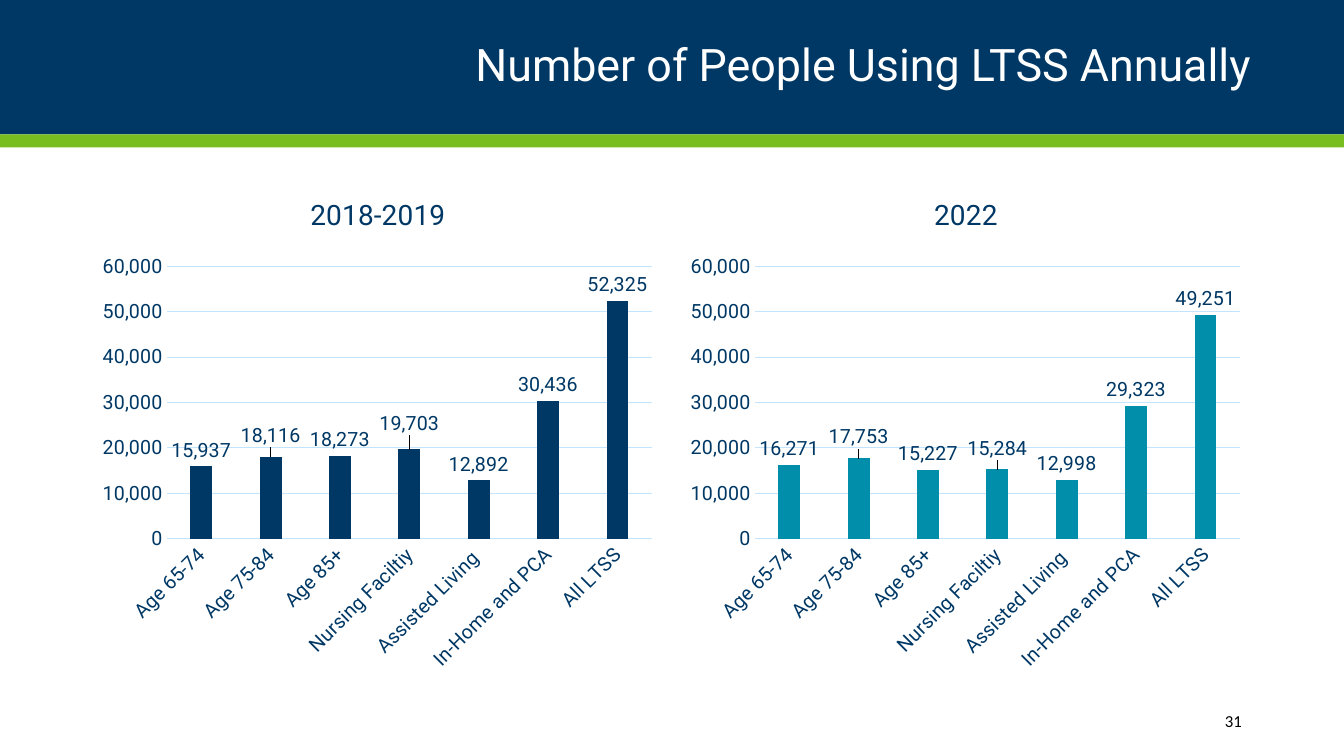
"""Build a slide comparing annual LTSS use in two periods with column charts."""
from dataclasses import dataclass
from typing import Any

from pptx import Presentation
from pptx.chart.data import CategoryChartData
from pptx.dml.color import RGBColor
from pptx.enum.chart import XL_CHART_TYPE, XL_LABEL_POSITION, XL_TICK_MARK
from pptx.enum.shapes import MSO_SHAPE
from pptx.enum.text import MSO_ANCHOR, PP_ALIGN
from pptx.oxml import parse_xml
from pptx.oxml.ns import nsdecls
from pptx.util import Pt

COLUMNS = XL_CHART_TYPE.COLUMN_CLUSTERED
OUTSIDE = XL_LABEL_POSITION.OUTSIDE_END
NO_TICK = XL_TICK_MARK.NONE
RECT = MSO_SHAPE.RECTANGLE
MIDDLE = MSO_ANCHOR.MIDDLE
RIGHT = PP_ALIGN.RIGHT

NAVY, GREEN, TEAL = "003865", "78BE21", "008EAA"
PALE, WHITE, BLACK = "C2E4FF", "FFFFFF", "000000"
NUMBER = "#,##0"
CATEGORIES = ("Age 65-74", "Age 75-84", "Age 85+", "Nursing Faciltiy",
              "Assisted Living ", "In-Home and PCA", "All LTSS")
AXIS = {"major_tick_mark": NO_TICK, "minor_tick_mark": NO_TICK}
VALUE_SCALE = {"minimum_scale": 0, "maximum_scale": 60000, "major_unit": 10000,
               "has_major_gridlines": True}
LABELS = {"show_value": True, "number_format": NUMBER,
          "number_format_is_linked": False, "position": OUTSIDE}


@dataclass
class Band:
    top: float
    height: float
    color: str


@dataclass
class Label:
    text: str
    box: tuple[float, float, float, float]
    size: float
    font: str
    color: str
    inset: float
    spacing: float


@dataclass
class Panel:
    title: str
    left: float
    title_x: float
    color: str
    values: tuple[int, ...]
    label_shifts: dict[int, float]


BANDS = (Band(0, 96, NAVY), Band(96, 9.36, GREEN))
TEXTS = (
    Label("Number of People Using LTSS Annually", (66, 0, 828, 96),
          32, "Roboto", WHITE, 0, 0.9),
    Label("31", (779, 500.4, 115.2, 28.8), 12, "Calibri", BLACK, 7.2, 1),
)
PANELS = (
    Panel("2018-2019", 66, 0.38, NAVY,
          (15937, 18116, 18273, 19703, 12892, 30436, 52325),
          {1: -0.01, 3: -0.02}),
    Panel("2022", 486, 0.44, TEAL,
          (16271, 17753, 15227, 15284, 12998, 29323, 49251),
          {1: -0.01, 3: -0.01}),
)


def rgb(value: str) -> RGBColor:
    """Turn a hex string into a colour."""
    return RGBColor.from_string(value)


def apply(obj: Any, values: dict[str, Any]) -> None:
    """Set each named attribute on an object."""
    for name, value in values.items():
        setattr(obj, name, value)


def set_font(font: Any, size: float, name: str, color: str) -> None:
    """Format a font."""
    apply(font, {"size": Pt(size), "name": name, "bold": False})
    font.color.rgb = rgb(color)


def set_line(line: Any) -> None:
    """Draw a pale thin line."""
    line.color.rgb = rgb(PALE)
    line.width = Pt(0.75)


def layout(x: float, y: float, size: tuple[float, float] | None = None,
           edge: bool = True) -> Any:
    """Make a manual chart layout from fractions of the chart area."""
    tags = '<c:layoutTarget val="inner"/>' if size else ""
    if edge:
        tags += '<c:xMode val="edge"/><c:yMode val="edge"/>'
    tags += f'<c:x val="{x}"/><c:y val="{y}"/>'
    if size:
        tags += f'<c:w val="{size[0]}"/><c:h val="{size[1]}"/>'
    return parse_xml(f'<c:layout {nsdecls("c")}><c:manualLayout>{tags}'
                     "</c:manualLayout></c:layout>")


def add_band(s: Any, band: Band, width: int) -> None:
    """Add a full-width colour band."""
    sp = s.shapes.add_shape(RECT, 0, Pt(band.top), width, Pt(band.height))
    sp.shadow.inherit = False
    sp.fill.solid()
    sp.fill.fore_color.rgb = rgb(band.color)
    sp.line.fill.background()


def add_label(s: Any, label: Label) -> None:
    """Add a right-aligned text box."""
    tf = s.shapes.add_textbox(*map(Pt, label.box)).text_frame
    apply(tf, {"word_wrap": True, "vertical_anchor": MIDDLE,
               "margin_left": Pt(label.inset), "margin_right": Pt(label.inset)})
    p = tf.paragraphs[0]
    apply(p, {"alignment": RIGHT, "line_spacing": label.spacing})
    r = p.add_run()
    r.text = label.text
    set_font(r.font, label.size, label.font, label.color)


def add_panel(s: Any, panel: Panel) -> None:
    """Add one titled column chart."""
    data = CategoryChartData(number_format=NUMBER)
    data.categories = CATEGORIES
    data.add_series("Series 1", panel.values)
    box = map(Pt, (panel.left, 125.28, 408, 360.72))
    chart = s.shapes.add_chart(COLUMNS, *box, data).chart
    chart.has_legend = False
    set_font(chart.font, 14, "Roboto", NAVY)

    title = chart.chart_title
    p = title.text_frame.paragraphs[0]
    r = p.add_run()
    r.text = panel.title
    set_font(r.font, 20, "Roboto", NAVY)
    title.element.find("{*}tx").addnext(layout(panel.title_x, 0.05))

    for axis in (chart.category_axis, chart.value_axis):
        apply(axis, AXIS)
        set_font(axis.tick_labels.font, 14, "Roboto", NAVY)
    set_line(chart.category_axis.format.line)
    for body in chart.element.xpath(".//c:catAx/c:txPr/a:bodyPr"):
        body.set("rot", "-2700000")
    apply(chart.value_axis, VALUE_SCALE)
    apply(chart.value_axis.tick_labels,
          {"number_format": NUMBER, "number_format_is_linked": False})
    chart.value_axis.format.line.fill.background()
    set_line(chart.value_axis.major_gridlines.format.line)

    plot = chart.plots[0]
    apply(plot, {"gap_width": 219, "overlap": -27, "vary_by_categories": False})
    series = plot.series[0]
    series.format.fill.solid()
    series.format.fill.fore_color.rgb = rgb(panel.color)
    apply(series.data_labels, LABELS)
    set_font(series.data_labels.font, 14, "Roboto", NAVY)
    for index in panel.label_shifts:
        label = series.points[index].data_label
        label.position = OUTSIDE
        set_font(label.font, 14, "Roboto", NAVY)
    for idx, shift in zip(chart.element.xpath(".//c:dLbl/c:idx"),
                          panel.label_shifts.values()):
        idx.addnext(layout(0, shift, edge=False))

    area = chart.element.xpath(".//c:plotArea")[0]
    for old in area.findall("{*}layout"):
        area.remove(old)
    area.insert(0, layout(0.13, 0.18, (0.85, 0.54)))


def main() -> None:
    """Build and save the slide."""
    prs = Presentation()
    apply(prs, {"slide_width": Pt(960), "slide_height": Pt(540)})
    s = prs.slides.add_slide(prs.slide_layouts[6])
    for band in BANDS:
        add_band(s, band, prs.slide_width)
    for panel in PANELS:
        add_panel(s, panel)
    for label in TEXTS:
        add_label(s, label)
    prs.save("out.pptx")


if __name__ == "__main__":
    main()
